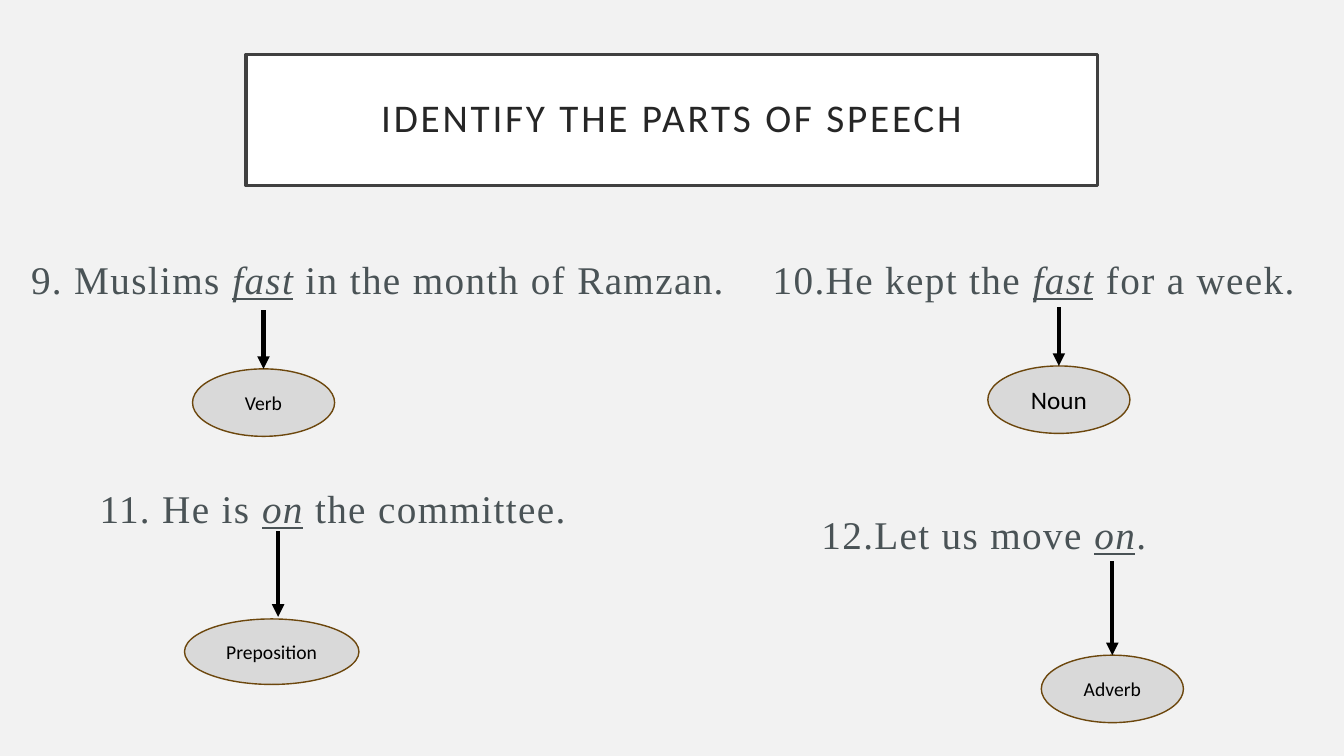
from dataclasses import dataclass

from lxml import etree
from pptx import Presentation
from pptx.dml.color import RGBColor
from pptx.enum import shapes, text
from pptx.oxml import ns
from pptx.util import Pt

COLORS = {
    "background": "F2F2F2",
    "title_fill": "FFFFFF",
    "title_line": "404040",
    "title_text": "262626",
    "sentence": "4A5356",
    "answer_fill": "D9D9D9",
    "answer_line": "6C470D",
    "black": "000000",
}
TITLE_LAYOUT = 5
Box = tuple[float, float, float, float]


@dataclass(frozen=True)
class Question:
    before: str
    word: str
    after: str
    sentence_box: Box
    answer: str
    answer_box: Box
    arrow_top: float
    answer_size: float = 14
    centered: bool = True
    loose_arrow: tuple[float, float] | None = None  # x and bottom, if not joined


QUESTIONS = [
    Question("9. Muslims ", "fast", " in the month of Ramzan.", (15.1, 161.3, 518.4, 76.3),
             "Verb", (137.5, 263.5, 101.5, 48.2), 221.8, centered=False),
    Question("10.He kept the ", "fast", " for a week.", (531.4, 164.2, 414, 69.8),
             "Noun", (705.6, 261.4, 101.5, 48.2), 219.6, answer_size=18),
    Question("11. He is ", "on", " the committee.", (15.1, 324.7, 445, 76.3),
             "Preposition", (131.8, 442.1, 124.6, 46.8), 379.4, loose_arrow=(198.7, 440.6)),
    Question("12.Let us move ", "on", ".", (474.5, 346.3, 456.5, 69.8),
             "Adverb", (743.8, 468, 101.5, 48.2), 401),
]


def color(name: str) -> RGBColor:
    return RGBColor.from_string(COLORS[name])


def points(box: Box) -> list[Pt]:
    return [Pt(length) for length in box]


def paint(shape, fill: str, line: str, width: float) -> None:
    shape.fill.solid()
    shape.fill.fore_color.rgb = color(fill)
    shape.line.color.rgb = color(line)
    shape.line.width = Pt(width)


def prepare_frame(shape, centered: bool = True):
    """Set wrapping and alignment, and return the first paragraph."""
    frame = shape.text_frame
    frame.word_wrap = True
    frame.auto_size = text.MSO_AUTO_SIZE.NONE
    frame.vertical_anchor = text.MSO_ANCHOR.MIDDLE
    para = frame.paragraphs[0]
    para.alignment = text.PP_ALIGN.CENTER if centered else text.PP_ALIGN.LEFT
    return para


def add_span(para, words: str, font: str, size: float, ink: str,
             tracking: float = 0, marked: bool = False) -> None:
    """Add one run; a marked run is italic and underlined."""
    span = para.add_run()
    span.text = words
    span.font.name = font
    span.font.size = Pt(size)
    span.font.color.rgb = color(ink)
    span.font.italic = marked
    span.font.underline = marked
    if tracking:
        span.font._element.set("spc", str(round(tracking * 100)))


def add_title(page) -> None:
    title = page.shapes.title
    title.left, title.top, title.width, title.height = points((175.7, 38.9, 608.4, 93.6))
    paint(title, "title_fill", "title_line", 2.5)
    para = prepare_frame(title)
    para.line_spacing = 0.9
    frame = title.text_frame
    frame.margin_left = frame.margin_right = Pt(14.4)
    frame.margin_top = frame.margin_bottom = Pt(14.4)
    add_span(para, "IDENTIFY THE PARTS OF SPEECH", "Calibri", 28, "title_text", tracking=2)


def add_sentence(page, question: Question) -> None:
    box = page.shapes.add_textbox(*points(question.sentence_box))
    para = prepare_frame(box, question.centered)
    para.space_before = Pt(10)
    for words in (question.before, question.word, question.after):
        add_span(para, words, "Times New Roman", 28, "sentence",
                 tracking=1, marked=words == question.word)


def add_answer(page, question: Question):
    oval = page.shapes.add_shape(shapes.MSO_SHAPE.OVAL, *points(question.answer_box))
    oval.shadow.inherit = False
    paint(oval, "answer_fill", "answer_line", 1)
    add_span(prepare_frame(oval), question.answer, "Calibri", question.answer_size, "black")
    return oval


def add_arrow(page, question: Question, oval) -> None:
    left, top, width, _ = question.answer_box
    x, bottom = question.loose_arrow or (left + width / 2, top)
    arrow = page.shapes.add_connector(shapes.MSO_CONNECTOR.STRAIGHT,
                                      *points((x, question.arrow_top, x, bottom)))
    if question.loose_arrow is None:
        arrow.end_connect(oval, 0)
    arrow.line.color.rgb = color("black")
    arrow.line.width = Pt(3)
    etree.SubElement(arrow.line._get_or_add_ln(), ns.qn("a:tailEnd"), type="triangle")
    etree.SubElement(arrow._element.spPr, ns.qn("a:effectLst"))


def main() -> None:
    deck = Presentation()
    deck.slide_width, deck.slide_height = Pt(960), Pt(540)
    page = deck.slides.add_slide(deck.slide_layouts[TITLE_LAYOUT])
    page.background.fill.solid()
    page.background.fill.fore_color.rgb = color("background")
    add_title(page)
    for question in QUESTIONS:
        add_sentence(page, question)
        oval = add_answer(page, question)
        add_arrow(page, question, oval)
    deck.save("out.pptx")


if __name__ == "__main__":
    main()
